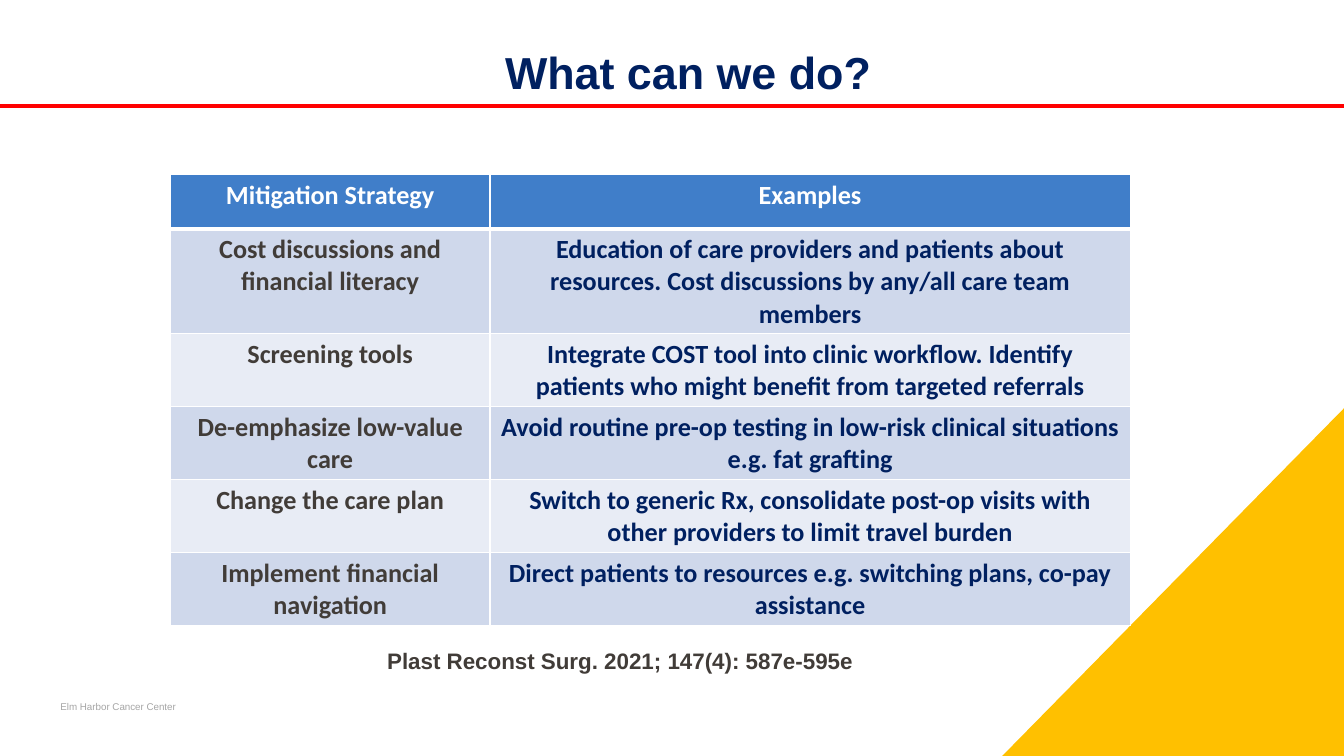
from lxml.etree import SubElement
from pptx import Presentation
from pptx.dml.color import RGBColor
from pptx.enum.shapes import MSO_CONNECTOR, MSO_SHAPE
from pptx.enum.text import MSO_ANCHOR, PP_ALIGN
from pptx.oxml.ns import qn
from pptx.util import Inches, Pt

NAVY, CHARCOAL, WHITE = "002060", "413C38", "FFFFFF"
HEADER_BLUE, BANDS = "407EC9", ("CFD8EB", "E8ECF5")
GOLD, RED, GREY = "FFC000", "FF0000", "A6A6A6"

TITLE = "What can we do?"
CITATION = "Plast Reconst Surg. 2021; 147(4): 587e-595e"
FOOTER = "Elm Harbor Cancer Center"
HEADINGS = ("Mitigation Strategy", "Examples")
STRATEGIES = [
    ("Cost discussions and financial literacy",
     "Education of care providers and patients about resources. "
     "Cost discussions by any/all care team members"),
    ("Screening tools",
     "Integrate COST tool into clinic workflow. "
     "Identify patients who might benefit from targeted referrals"),
    ("De-emphasize low-value care",
     "Avoid routine pre-op testing in low-risk clinical situations e.g. fat grafting"),
    ("Change the care plan",
     "Switch to generic Rx, consolidate post-op visits with "
     "other providers to limit travel burden"),
    ("Implement financial navigation",
     "Direct patients to resources e.g. switching plans, co-pay assistance"),
]
COLUMN_WIDTHS = (3.17, 6.35)
HEADER_HEIGHT, ROW_HEIGHT = 0.54, 0.58


def color(code):
    return RGBColor.from_string(code)


def add_run(paragraph, text, size, code, font="Arial", bold=True):
    run = paragraph.add_run()
    run.text = text
    run.font.name = font
    run.font.size = Pt(size)
    run.font.bold = bold
    run.font.color.rgb = color(code)


def add_line_of_text(slide, box, text, size, code, bold=True, spacing=1.0):
    frame = slide.shapes.add_textbox(*map(Inches, box)).text_frame
    frame.word_wrap = True
    frame.vertical_anchor = MSO_ANCHOR.BOTTOM
    frame.margin_left = frame.margin_right = frame.margin_top = frame.margin_bottom = 0
    frame.paragraphs[0].line_spacing = spacing
    add_run(frame.paragraphs[0], text, size, code, bold=bold)


def set_borders(cell, top, bottom):
    properties = cell._tc.get_or_add_tcPr()
    for side, points in (("L", 1), ("R", 1), ("T", top), ("B", bottom)):
        edge = SubElement(properties, qn(f"a:ln{side}"), w=str(Pt(points)))
        fill = SubElement(edge, qn("a:solidFill"))
        SubElement(fill, qn("a:srgbClr"), val=WHITE)


def add_strategy_table(slide):
    rows = [HEADINGS] + STRATEGIES
    height = HEADER_HEIGHT + ROW_HEIGHT * len(STRATEGIES)
    table = slide.shapes.add_table(
        len(rows), len(HEADINGS), Inches(1.69), Inches(1.73),
        Inches(sum(COLUMN_WIDTHS)), Inches(height)).table
    for column, width in zip(table.columns, COLUMN_WIDTHS):
        column.width = Inches(width)
    for r, row in enumerate(rows):
        table.rows[r].height = Inches(ROW_HEIGHT if r else HEADER_HEIGHT)
        text_colors = (CHARCOAL, NAVY) if r else (WHITE, WHITE)
        for c, text in enumerate(row):
            cell = table.cell(r, c)
            set_borders(cell, 3 if r == 1 else 1, 1 if r else 3)
            cell.fill.solid()
            cell.fill.fore_color.rgb = color(BANDS[(r - 1) % 2] if r else HEADER_BLUE)
            paragraph = cell.text_frame.paragraphs[0]
            paragraph.alignment = PP_ALIGN.CENTER
            add_run(paragraph, text, 18.7, text_colors[c], "Calibri")


def main():
    deck = Presentation()
    deck.slide_width, deck.slide_height = Inches(13.33), Inches(7.5)
    slide = deck.slides.add_slide(deck.slide_layouts[6])

    corner = slide.shapes.add_shape(
        MSO_SHAPE.RIGHT_TRIANGLE, Inches(9.94), Inches(4.05), Inches(3.39), Inches(3.45))
    corner.shadow.inherit = False
    corner.fill.solid()
    corner.fill.fore_color.rgb = color(GOLD)
    corner.line.fill.background()
    corner._element.spPr.xfrm.set("flipH", "1")

    add_line_of_text(slide, (0.6, 6.95, 8.11, 0.12), FOOTER, 7, GREY, bold=False)
    add_line_of_text(slide, (5.01, 0.04, 8, 0.94), TITLE, 32, NAVY, spacing=0.9)

    rule = slide.shapes.add_connector(
        MSO_CONNECTOR.STRAIGHT, 0, Inches(1.05), deck.slide_width, Inches(1.05))
    rule.line.color.rgb = color(RED)
    rule.line.width = Pt(2.75)
    SubElement(rule._element.spPr, qn("a:effectLst"))

    add_line_of_text(slide, (3.84, 6.42, 9, 0.27), CITATION, 16, CHARCOAL)
    add_strategy_table(slide)
    deck.save("out.pptx")


if __name__ == "__main__":
    main()
